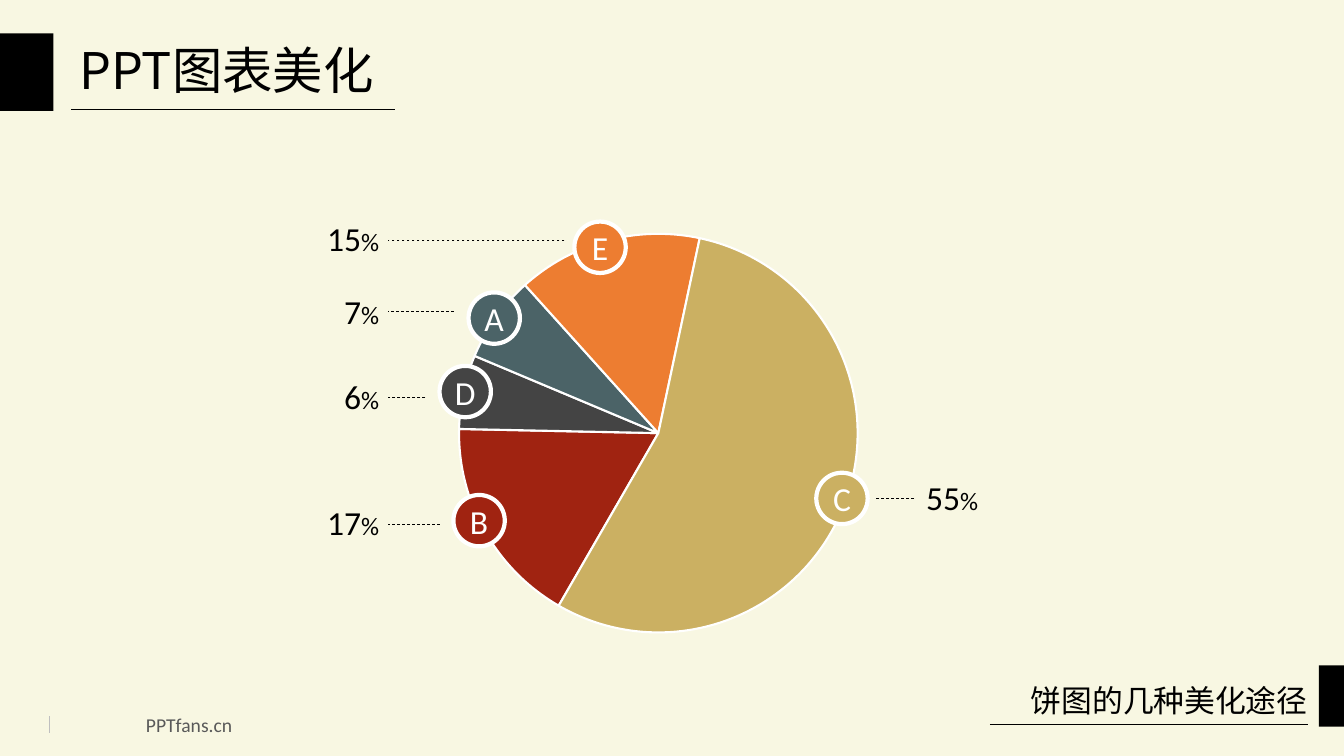
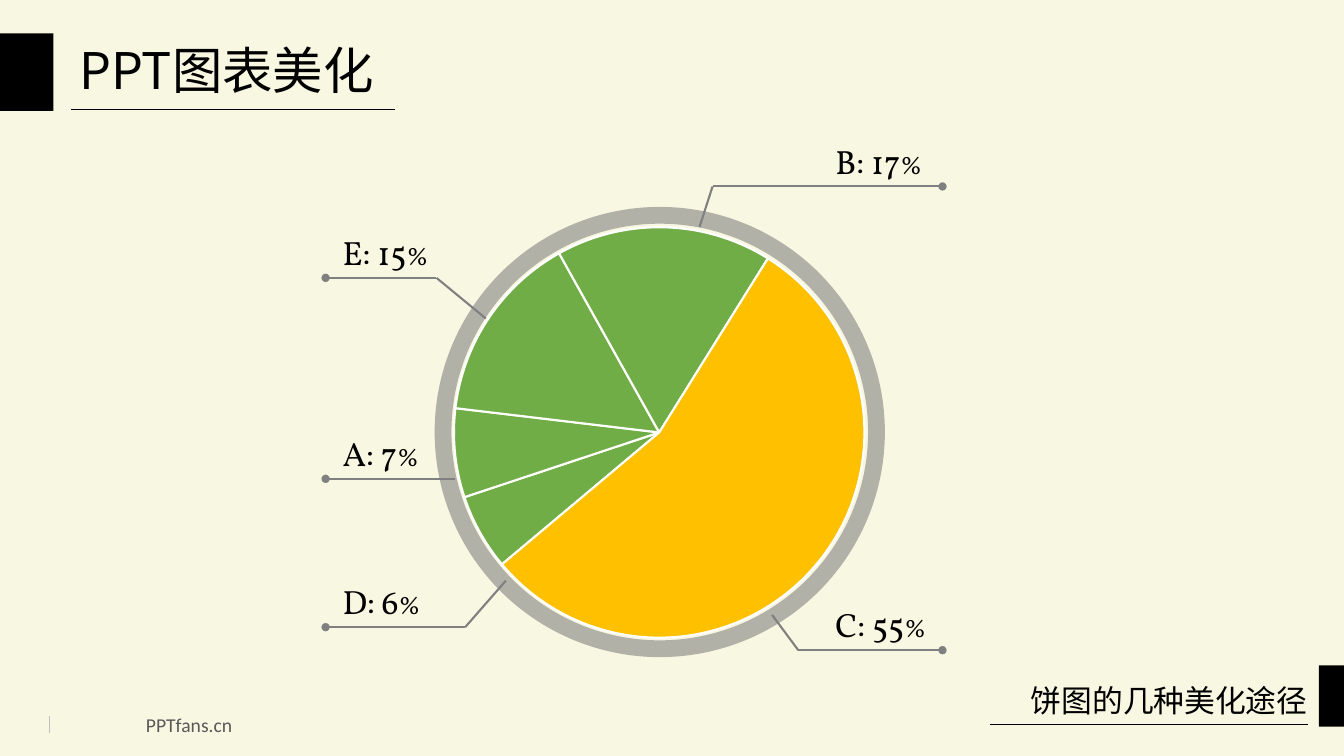
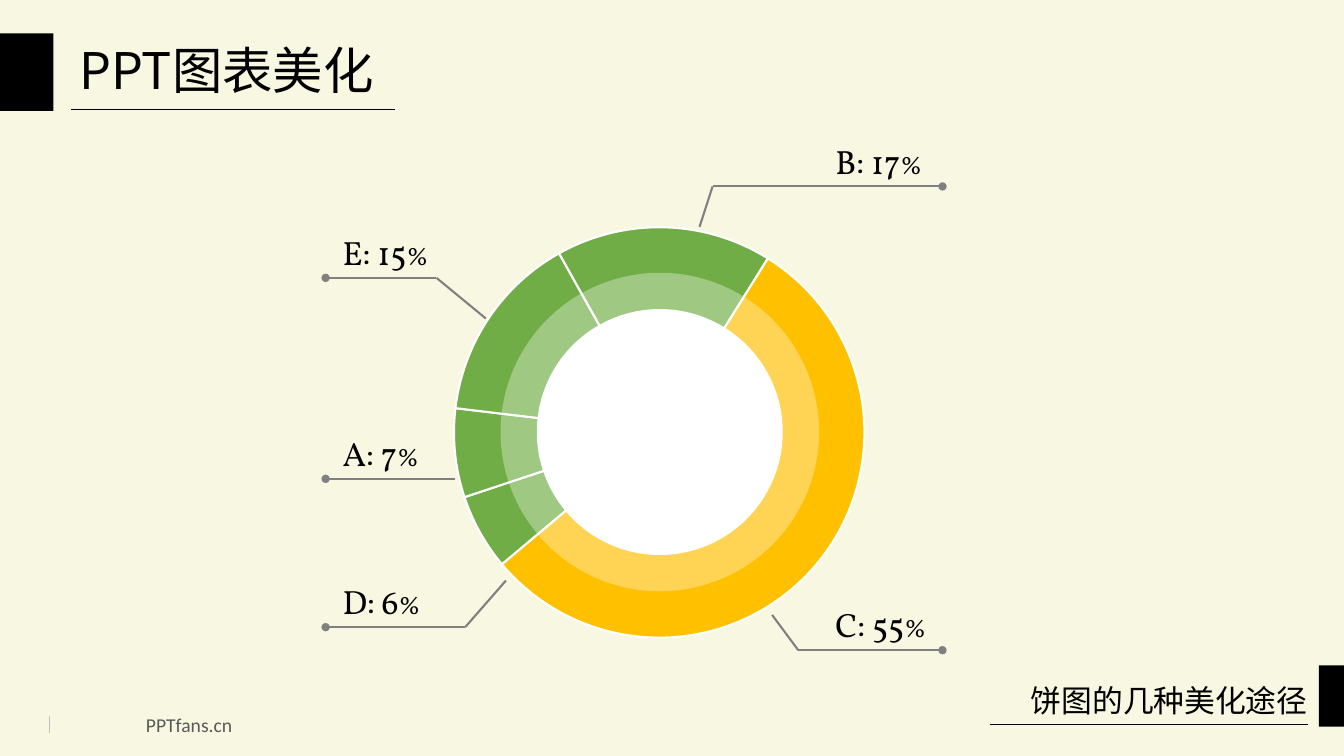
from dataclasses import dataclass

from pptx import Presentation
from pptx.chart.data import CategoryChartData
from pptx.dml.color import RGBColor
from pptx.enum.chart import XL_CHART_TYPE
from pptx.enum.dml import MSO_LINE
from pptx.enum.shapes import MSO_CONNECTOR, MSO_SHAPE
from pptx.enum.text import MSO_ANCHOR, PP_ALIGN
from pptx.oxml import parse_xml
from pptx.oxml.ns import nsdecls, qn
from pptx.oxml.xmlchemy import OxmlElement
from pptx.util import Pt


@dataclass(frozen=True)
class Theme:
    # Colours
    background: str = "F8F7E2"
    ink: str = "000000"
    white: str = "FFFFFF"
    footer: str = "595959"
    footer_rule: str = "BFBFBF"
    leader: str = "808080"
    red: str = "A02311"
    charcoal: str = "444444"
    slate: str = "4B6367"
    orange: str = "ED7D31"
    sand: str = "CBB062"
    green: str = "70AD47"
    amber: str = "FFC000"
    # Fonts and type sizes
    latin: str = "Calibri"
    chinese: str = "Noto Sans CJK SC"
    serif: str = "Vollkorn"
    title_size: int = 36
    caption_size: int = 22
    value_size: int = 24
    percent_size: int = 18
    footer_size: int = 14


THEME = Theme()
PIE_CENTER = (471.3, 308.6)
LEADER_LEFT, LEADER_RIGHT = 232.6, 673.2

# Letter, percentage, colour, marker centre, label top, leader ends and height
MARKERS = [
    ("C", 55, THEME.sand, (601.4, 356), 337, (653, 625.7), 355.7),
    ("B", 17, THEME.red, (342.2, 371.9), 355, (314, 277.2), 374.4),
    ("E", 15, THEME.orange, (428.6, 176.6), 152, (403.2, 277.2), 172),
    ("A", 7, THEME.slate, (353, 227.2), 204.5, (324, 277.2), 222.5),
    ("D", 6, THEME.charcoal, (332.3, 279.7), 265, (303.8, 277.2), 283.7),
]

# Letter, percentage, corners of the leader up to its dot
CALLOUTS = [
    ("C", 55, [(551.5, 439.2), (570.2, 464.4), (LEADER_RIGHT, 464.4)]),
    ("D", 6, [(361.4, 414.7), (332.3, 448), (LEADER_LEFT, 448)]),
    ("A", 7, [(324.7, 342), (LEADER_LEFT, 342)]),
    ("E", 15, [(347, 227.5), (311.8, 198.5), (LEADER_LEFT, 198.5)]),
    ("B", 17, [(499.7, 162), (509, 133.2), (LEADER_RIGHT, 133.2)]),
]


def rgb(color):
    return RGBColor.from_string(color)


class Deck:
    def __init__(self, theme):
        self.theme = theme
        self.presentation = Presentation()
        self.presentation.slide_width = Pt(960)
        self.presentation.slide_height = Pt(540)
        self.slide = None

    def new_slide(self):
        """Start a slide with the shared title, bands and footer."""
        theme = self.theme
        layout = self.presentation.slide_layouts[6]
        self.slide = self.presentation.slides.add_slide(layout)
        fill = self.slide.background.fill
        fill.solid()
        fill.fore_color.rgb = rgb(theme.background)
        # Title
        self.line((51, 77.8), (282.2, 77.8), theme.ink, 0.5)
        self.text((49.7, 23.8, 385, 51), [("PPT图表美化", theme.title_size)],
                  theme.chinese, anchor=MSO_ANCHOR.MIDDLE)
        # Bands
        self.shape(MSO_SHAPE.RECTANGLE, (0, 23.8, 38.2, 55.4), theme.ink)
        self.shape(MSO_SHAPE.RECTANGLE, (942, 475.2, 18, 43.9), theme.ink)
        # Footer and caption
        self.line((707, 517.5), (934.6, 517.5), theme.ink, 0.5)
        self.line((35.3, 523.4), (35.3, 511.2), theme.footer_rule, 0.75)
        self.text((97.2, 505.4, 77, 24.5), [("PPTfans.cn", theme.footer_size)],
                  theme.latin, theme.footer, wrap=False)
        self.text((698.4, 483.1, 242.6, 33.8),
                  [("饼图的几种美化途径", theme.caption_size)], theme.chinese,
                  align=PP_ALIGN.RIGHT, anchor=MSO_ANCHOR.MIDDLE)

    def line(self, start, end, color, width, dash=None, dot=False):
        connector = self.slide.shapes.add_connector(
            MSO_CONNECTOR.STRAIGHT, *map(Pt, start + end))
        connector.line.color.rgb = rgb(color)
        connector.line.width = Pt(width)
        if dash:
            connector.line.dash_style = dash
        properties = connector._element.spPr
        if dot:
            tail = OxmlElement("a:tailEnd")
            tail.set("type", "oval")
            properties.find(qn("a:ln")).append(tail)
        properties.append(OxmlElement("a:effectLst"))

    def shape(self, kind, box, fill=None, outline=None, width=1, opacity=None):
        shape = self.slide.shapes.add_shape(kind, *map(Pt, box))
        shape.shadow.inherit = False
        if fill:
            shape.fill.solid()
            shape.fill.fore_color.rgb = rgb(fill)
        else:
            shape.fill.background()
        if outline:
            shape.line.color.rgb = rgb(outline)
            shape.line.width = Pt(width)
        else:
            shape.line.fill.background()
        if opacity:
            for color in shape._element.spPr.iter(qn("a:srgbClr")):
                alpha = OxmlElement("a:alpha")
                alpha.set("val", str(opacity * 1000))
                color.append(alpha)
        return shape

    def circle(self, center, diameter, **style):
        left, top = (value - diameter / 2 for value in center)
        return self.shape(MSO_SHAPE.OVAL, (left, top, diameter, diameter), **style)

    def add_runs(self, frame, runs, font, color, align):
        paragraph = frame.paragraphs[0]
        paragraph.alignment = align
        for words, size in runs:
            run = paragraph.add_run()
            run.text = words
            run.font.size = Pt(size)
            run.font.name = font
            run.font.color.rgb = rgb(color)
            if font == self.theme.chinese:
                east_asian = OxmlElement("a:ea")
                east_asian.set("typeface", font)
                run.font._element.find(qn("a:latin")).addnext(east_asian)

    def text(self, box, runs, font, color=THEME.ink, align=PP_ALIGN.LEFT,
             anchor=MSO_ANCHOR.TOP, wrap=True):
        frame = self.slide.shapes.add_textbox(*map(Pt, box)).text_frame
        frame.word_wrap = wrap
        frame.vertical_anchor = anchor
        self.add_runs(frame, runs, font, color, align)

    def percentage(self, box, value, font, align=PP_ALIGN.LEFT):
        runs = [(value, self.theme.value_size), ("%", self.theme.percent_size)]
        self.text(box, runs, font, align=align)

    def pie(self, box, values, colors, start, plot_area):
        theme = self.theme
        data = CategoryChartData()
        data.categories = [str(number + 1) for number in range(len(values))]
        data.add_series("Series 1", values)
        chart = self.slide.shapes.add_chart(
            XL_CHART_TYPE.PIE, *map(Pt, box), data).chart
        chart.has_legend = chart.has_title = False
        chart.font.name = theme.latin
        chart.font.size = Pt(theme.percent_size)
        chart.font.color.rgb = rgb(theme.ink)
        plot = chart.plots[0]
        plot.vary_by_categories = True
        for index, color in enumerate(colors):
            point = plot.series[0].points[index].format
            point.fill.solid()
            point.fill.fore_color.rgb = rgb(color)
            point.line.color.rgb = rgb(theme.white)
            point.line.width = Pt(1.5)
        # Rotation of the first slice
        pie = plot._element
        for old in pie.findall(qn("c:firstSliceAng")):
            pie.remove(old)
        angle = OxmlElement("c:firstSliceAng")
        angle.set("val", str(start))
        pie.append(angle)
        # Fixed inner plot area
        area = pie.getparent()
        for old in area.findall(qn("c:layout")):
            area.remove(old)
        places = "".join(f'<c:{name} val="{value}"/>'
                         for name, value in zip("xywh", plot_area))
        area.insert(0, parse_xml(
            f'<c:layout {nsdecls("c")}><c:manualLayout>'
            '<c:layoutTarget val="inner"/><c:xMode val="edge"/>'
            f'<c:yMode val="edge"/>{places}</c:manualLayout></c:layout>'))

    def marker(self, letter, value, color, center, label_top, ends, height):
        """Lettered disc on the pie edge with a dashed leader and its value."""
        theme = self.theme
        disc = self.circle(center, 36.7, fill=color, outline=theme.white, width=3)
        frame = disc.text_frame
        frame.margin_left = frame.margin_right = 0
        frame.vertical_anchor = MSO_ANCHOR.MIDDLE
        self.add_runs(frame, [(letter, theme.value_size)], theme.latin,
                      theme.white, PP_ALIGN.CENTER)
        on_right = center[0] > PIE_CENTER[0]
        left, width = (654.5, 95.8) if on_right else (222.5, 55.4)
        self.percentage((left, label_top, width, 36), str(value), theme.latin,
                        PP_ALIGN.LEFT if on_right else PP_ALIGN.RIGHT)
        self.line((ends[0], height), (ends[1], height), theme.ink, 0.5,
                  dash=MSO_LINE.DASH)

    def callout(self, letter, value, corners):
        """Bent leader ending in a dot, with its label above."""
        for start, end in zip(corners, corners[1:]):
            self.line(start, end, self.theme.leader, 1.5, dot=end == corners[-1])
        end_x, end_y = corners[-1]
        left = 237.6 if end_x == LEADER_LEFT else 589.7
        self.percentage((left, end_y - 36.4, 95.8, 36), f"{letter}: {value}",
                        self.theme.serif)

    def highlighted_pie(self):
        theme = self.theme
        self.pie((271.4, 136.1, 529.2, 349.9), [6, 7, 15, 17, 55],
                 [theme.green] * 4 + [theme.amber], 230,
                 (0.098, 0.075, 0.558, 0.838))

    def callouts(self):
        for entry in CALLOUTS:
            self.callout(*entry)


def main():
    deck = Deck(THEME)

    # Pie with lettered markers
    deck.new_slide()
    deck.pie((280.1, 124.6, 391.7, 378), [17, 6, 7, 15, 55],
             [THEME.red, THEME.charcoal, THEME.slate, THEME.orange, THEME.sand],
             210, (0.122, 0.112, 0.727, 0.754))
    for entry in MARKERS:
        deck.marker(*entry)

    # Pie inside a translucent ring
    deck.new_slide()
    deck.highlighted_pie()
    deck.circle(PIE_CENTER, 309.6, outline=THEME.leader, width=12, opacity=58)
    deck.callouts()

    # Pie turned into a doughnut
    deck.new_slide()
    deck.highlighted_pie()
    deck.circle(PIE_CENTER, 175.7, fill=THEME.white)
    deck.circle(PIE_CENTER, 227.5, fill=THEME.white, opacity=33)
    deck.callouts()

    deck.presentation.save("out.pptx")


if __name__ == "__main__":
    main()
